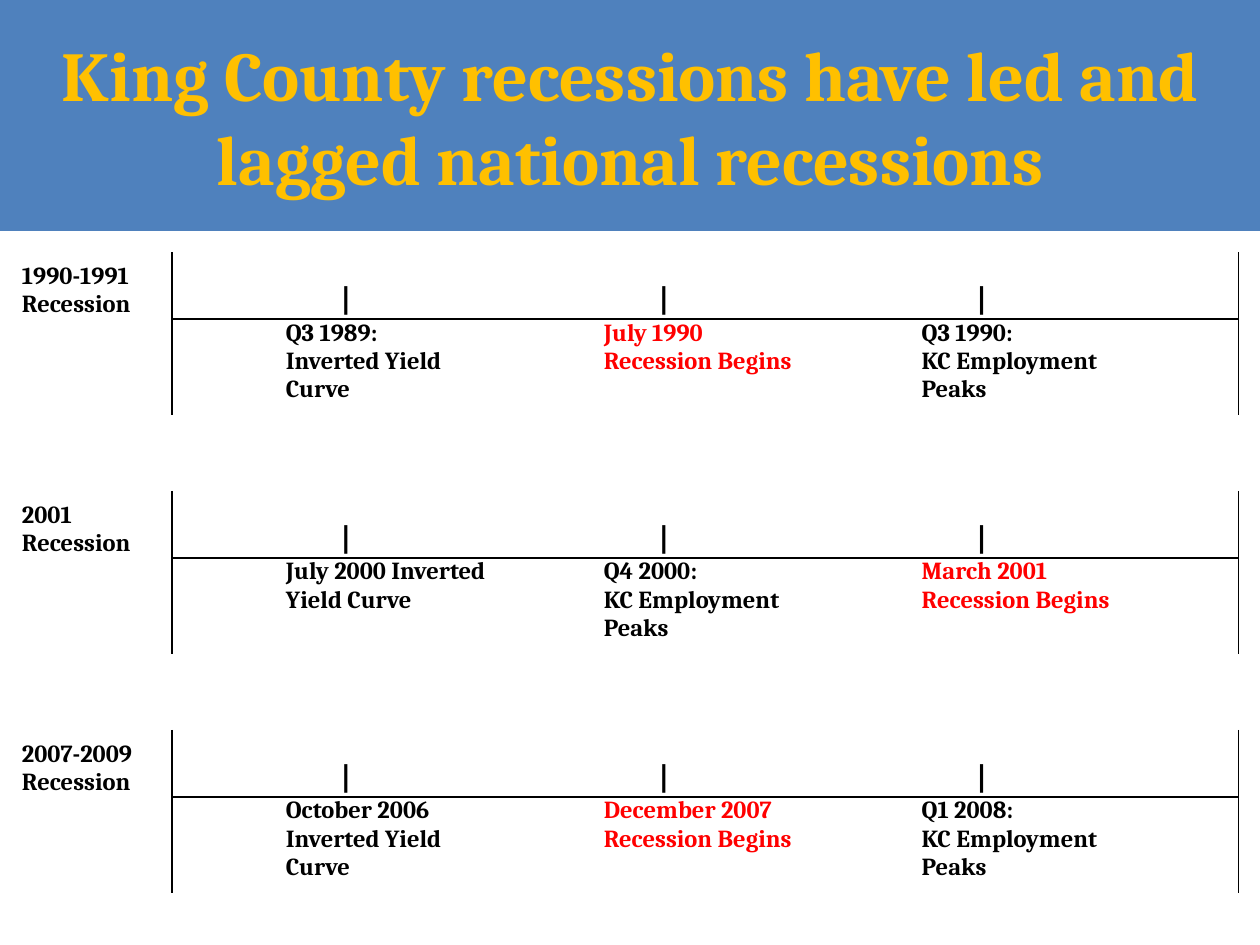
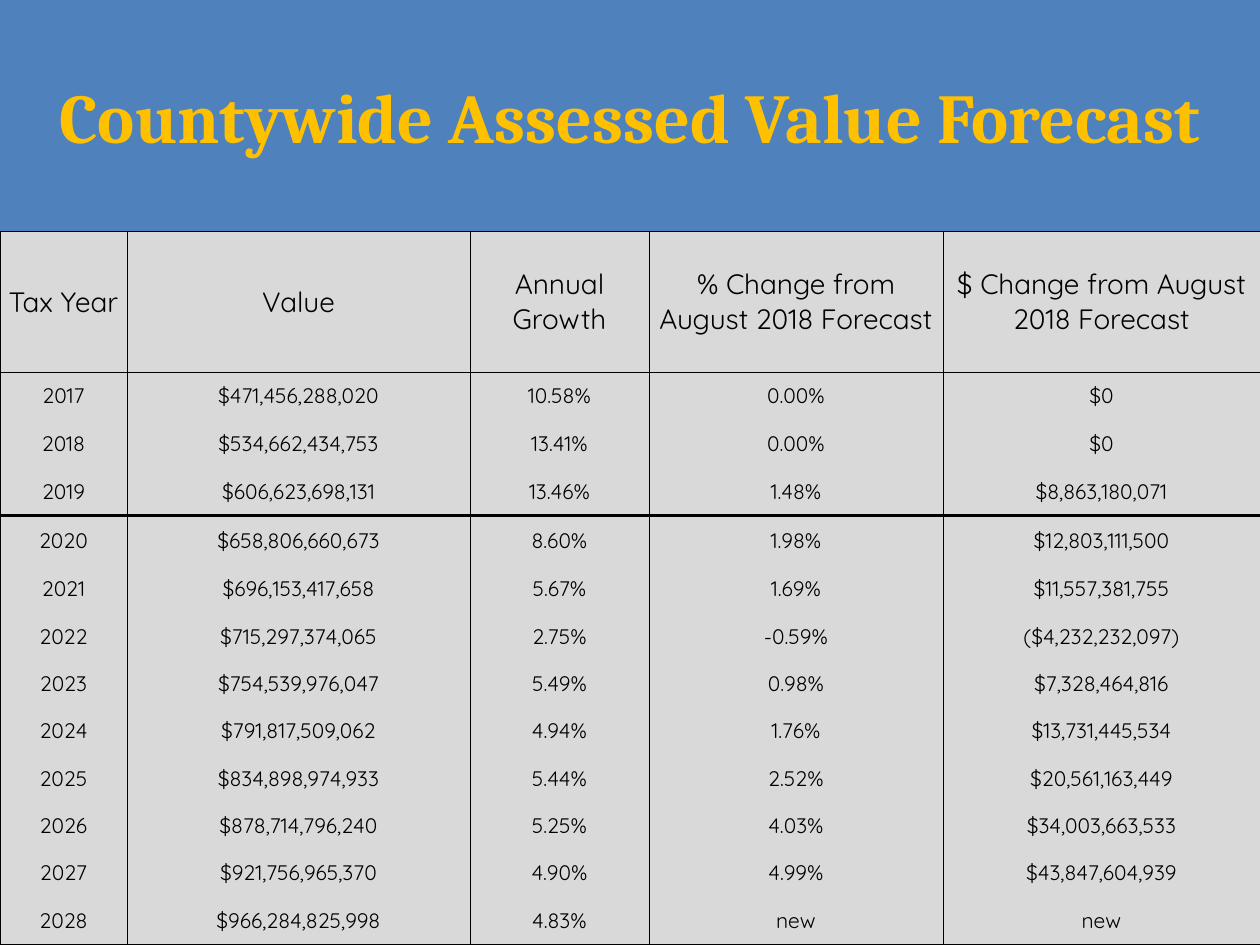
"""Build two slides: recession timelines and the countywide assessed value forecast."""
from lxml import etree
from pptx import Presentation
from pptx.dml.color import RGBColor
from pptx.enum.text import MSO_ANCHOR, PP_ALIGN
from pptx.oxml.ns import qn
from pptx.util import Emu, Pt

LEFT, CENTER = PP_ALIGN.LEFT, PP_ALIGN.CENTER
TOP, MIDDLE, BOTTOM = MSO_ANCHOR.TOP, MSO_ANCHOR.MIDDLE, MSO_ANCHOR.BOTTOM
BLUE = RGBColor(0x4F, 0x81, 0xBD)
GOLD = RGBColor(0xFF, 0xC0, 0x00)
BLACK = RGBColor(0x00, 0x00, 0x00)
RED = RGBColor(0xFF, 0x00, 0x00)
WHITE = RGBColor(0xFF, 0xFF, 0xFF)
GREY = RGBColor(0xD9, 0xD9, 0xD9)
SERIF, SANS = "Cambria", "Quicksand"
TITLE_ONLY = 5
PX = 914400 / 126
BAND_HEIGHT = 231


def add_titled_table(title, left, top, widths, heights):
    slide = prs.slides.add_slide(prs.slide_layouts[TITLE_ONLY])
    band = slide.shapes.title
    band.left, band.top = Emu(0), Emu(0)
    band.width, band.height = prs.slide_width, Emu(round(BAND_HEIGHT * PX))
    band.fill.solid()
    band.fill.fore_color.rgb = BLUE
    band.text_frame.text = title
    band.text_frame.vertical_anchor = MIDDLE
    paragraph = band.text_frame.paragraphs[0]
    paragraph.alignment = CENTER
    font = paragraph.runs[0].font
    font.name, font.size, font.bold = SERIF, Pt(40), True
    font.color.rgb = GOLD

    box = [Emu(round(v * PX)) for v in (left, top, sum(widths), sum(heights))]
    table = slide.shapes.add_table(len(heights), len(widths), *box).table
    table.first_row = table.horz_banding = False
    for column, width in zip(table.columns, widths):
        column.width = Emu(round(width * PX))
    for row, height in zip(table.rows, heights):
        row.height = Emu(round(height * PX))
    return table


def format_cell(cell, text, name, size, color, bold, align, anchor, margin, fill, borders):
    cell.text = text
    cell.vertical_anchor = anchor
    cell.margin_left = Emu(round(margin * PX))
    cell.margin_right = cell.margin_top = cell.margin_bottom = Emu(0)
    for paragraph in cell.text_frame.paragraphs:
        paragraph.alignment = align
        for run in paragraph.runs:
            run.font.name, run.font.size, run.font.bold = name, Pt(size), bold
            run.font.color.rgb = color
    properties = cell._tc.get_or_add_tcPr()
    for side in "LRTB":
        line = etree.SubElement(properties, qn(f"a:ln{side}"))
        if side in borders:
            line.set("w", str(Pt(borders[side])))
            solid = etree.SubElement(line, qn("a:solidFill"))
            etree.SubElement(solid, qn("a:srgbClr")).set("val", str(BLACK))
        else:
            etree.SubElement(line, qn("a:noFill"))
    cell.fill.solid()
    cell.fill.fore_color.rgb = fill


prs = Presentation()
prs.slide_width, prs.slide_height = Emu(round(1260 * PX)), Emu(round(945 * PX))

RECESSIONS = [
    ("1990-1991\vRecession",
     ["Q3 1989:\nInverted Yield Curve", "July 1990 Recession Begins",
      "Q3 1990:\vKC Employment Peaks"]),
    ("2001\vRecession",
     ["July 2000 Inverted Yield Curve", "Q4 2000:\vKC Employment Peaks",
      "March 2001 Recession Begins"]),
    ("2007-2009\vRecession",
     ["October 2006\nInverted Yield Curve", "December 2007 Recession Begins",
      "Q1 2008:\vKC Employment Peaks"]),
]
timeline_widths = [151] + [113, 205] * 3 + [113]
timeline_heights = [67, 96, 76] * 2 + [67, 96, 32]
timeline = add_titled_table("King County recessions have led and lagged national recessions",
                            21, 252, timeline_widths, timeline_heights)
for r in range(len(timeline_heights)):
    label, events = RECESSIONS[r // 3]
    part = r % 3
    for c in range(len(timeline_widths)):
        is_event = c in (2, 4, 6)
        text, size, color, margin, borders = "", 14, BLACK, 1, {}
        if part == 0 and c == 0:
            text = label
        elif part == 0 and is_event:
            text, size, margin = "|", 18, 56
        elif part == 1 and is_event:
            text = events[c // 2 - 1]
            color = RED if text.endswith("Begins") else BLACK
        if part < 2:
            if c > 0:
                borders["B" if part == 0 else "T"] = 1
            if c == 1:
                borders["L"] = 1
            if c in (0, 7):
                borders["R"] = 1
        format_cell(timeline.cell(r, c), text, SERIF, size, color, True, LEFT,
                    TOP if part else BOTTOM, margin, WHITE, borders)

FORECAST = [
    ("Tax Year", "Value", "Annual Growth", "% Change from August 2018 Forecast",
     "$ Change from August 2018 Forecast"),
    ("2017", "$471,456,288,020", "10.58%", "0.00%", "$0"),
    ("2018", "$534,662,434,753", "13.41%", "0.00%", "$0"),
    ("2019", "$606,623,698,131", "13.46%", "1.48%", "$8,863,180,071"),
    ("2020", "$658,806,660,673", "8.60%", "1.98%", "$12,803,111,500"),
    ("2021", "$696,153,417,658", "5.67%", "1.69%", "$11,557,381,755"),
    ("2022", "$715,297,374,065", "2.75%", "-0.59%", "($4,232,232,097)"),
    ("2023", "$754,539,976,047", "5.49%", "0.98%", "$7,328,464,816"),
    ("2024", "$791,817,509,062", "4.94%", "1.76%", "$13,731,445,534"),
    ("2025", "$834,898,974,933", "5.44%", "2.52%", "$20,561,163,449"),
    ("2026", "$878,714,796,240", "5.25%", "4.03%", "$34,003,663,533"),
    ("2027", "$921,756,965,370", "4.90%", "4.99%", "$43,847,604,939"),
    ("2028", "$966,284,825,998", "4.83%", "new", "new"),
]
forecast_heights = [141, 48, 47, 49, 49, 48, 47, 47, 48, 47, 47, 48, 48]
forecast = add_titled_table("Countywide Assessed Value Forecast", 0, BAND_HEIGHT,
                            [127, 343, 179, 294, 317], forecast_heights)
RULES_ABOVE = {0: 0.5, 1: 0.5, 4: 2, 13: 0.5}
for r, values in enumerate(FORECAST):
    borders = {"L": 0.5, "R": 0.5}
    if r in RULES_ABOVE:
        borders["T"] = RULES_ABOVE[r]
    if r + 1 in RULES_ABOVE:
        borders["B"] = RULES_ABOVE[r + 1]
    for c, value in enumerate(values):
        format_cell(forecast.cell(r, c), value, SANS, 12 if r else 16, BLACK, False,
                    CENTER, MIDDLE, 0, GREY, borders)

prs.save("out.pptx")
